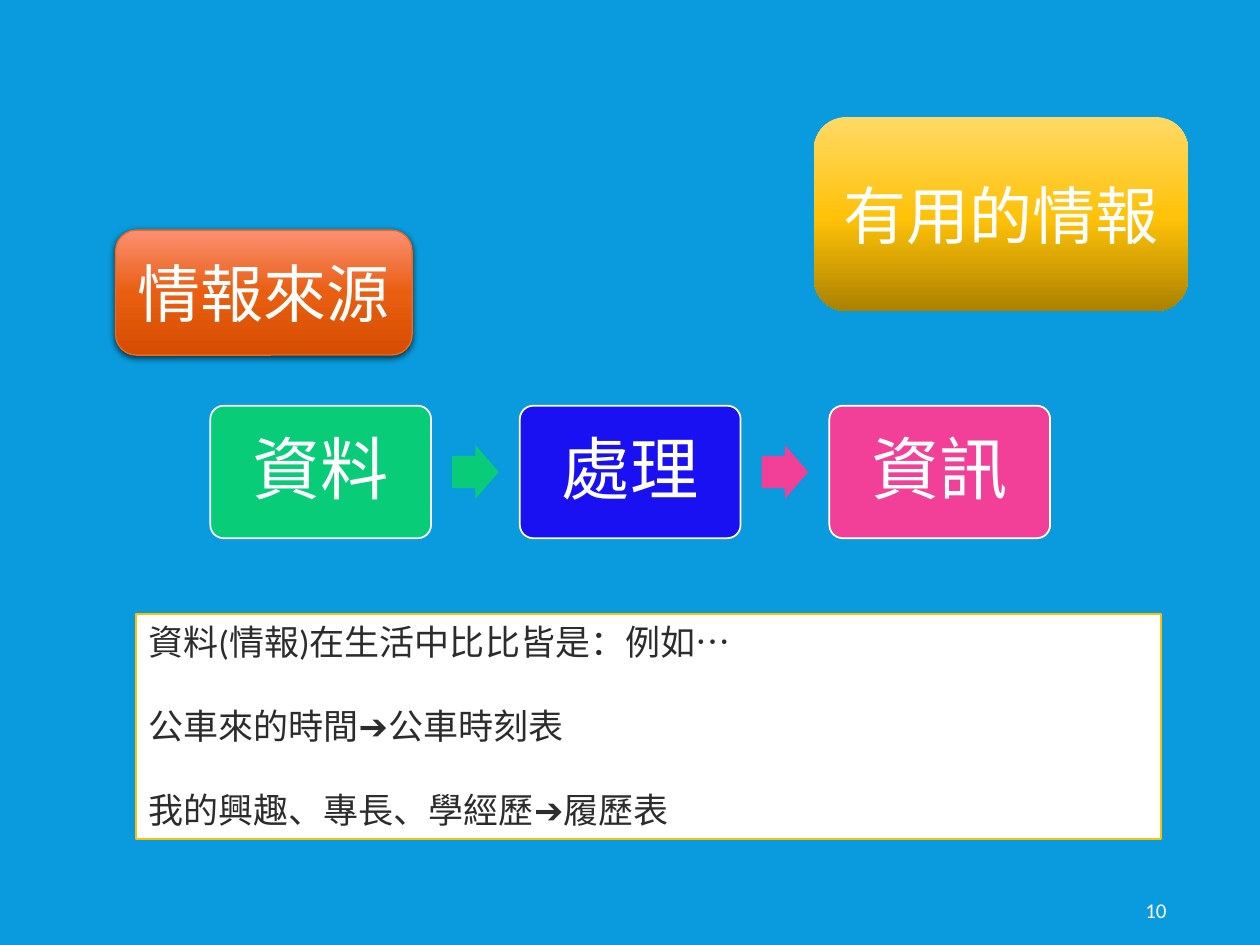
from copy import deepcopy

from lxml.etree import SubElement
from pptx import Presentation
from pptx.dml.color import RGBColor
from pptx.enum.shapes import MSO_SHAPE as Shape
from pptx.enum.text import MSO_ANCHOR as Anchor, PP_ALIGN as Align
from pptx.oxml.ns import qn
from pptx.util import Cm, Pt

FONT = "Calibri"
WHITE = "FFFFFF"
GREEN, BLUE, PINK = "08CC78", "1911F2", "F24099"

STEPS = [("資料", GREEN), ("處理", BLUE), ("資訊", PINK)]
ARROWS = [GREEN, PINK]
GOLD = [(0, "FFD966"), (0.52, "FFC208"), (1, "AB8100")]
ORANGE = [(0, "FB9074"), (0.5, "E95E10"), (1, "D64D01")]
NOTES = [
    "資料(情報)在生活中比比皆是：例如…",
    "公車來的時間➔公車時刻表",
    "我的興趣、專長、學經歷➔履歷表",
]

# Step row, in centimetres
LEFT, TOP, WIDE, HIGH, PITCH = 4.24, 8.18, 4.45, 2.67, 6.24
TIP_W, TIP_H = 0.94, 1.08


def rgb(code):
    return RGBColor.from_string(code)


def add_box(kind, place, fill=None, line=None, weight=1):
    box = slide.shapes.add_shape(kind, *map(Cm, place))
    box.shadow.inherit = False
    if fill:
        box.fill.solid()
        box.fill.fore_color.rgb = rgb(fill)
    if line:
        box.line.color.rgb = rgb(line)
        box.line.width = Pt(weight)
    else:
        box.line.fill.background()
    return box


def write(box, lines, size, color=WHITE, align=Align.CENTER, anchor=Anchor.MIDDLE):
    frame = box.text_frame
    frame.word_wrap = True
    frame.vertical_anchor = anchor
    frame.text = "\n".join(lines)
    for para in frame.paragraphs:
        para.alignment = align
        for run in para.runs:
            run.font.name = FONT
            run.font.size = Pt(size)
            run.font.color.rgb = rgb(color)
    return frame


def shade(box, stops):
    """Fill the box with a three-stop gradient from top to bottom."""
    box.fill.gradient()
    box.fill.gradient_angle = 270
    group = box.fill.gradient_stops[0]._gs.getparent()
    group.append(deepcopy(group[0]))
    for stop, (place, color) in zip(box.fill.gradient_stops, stops):
        stop.position = place
        stop.color.rgb = rgb(color)


def add_shadow(box, blur, dist, alpha):
    """Cast a soft black shadow straight down."""
    effects = box._element.spPr.find(qn("a:effectLst"))
    outer = SubElement(effects, qn("a:outerShdw"), blurRad=str(Pt(blur)),
                       dist=str(Pt(dist)), dir="5400000", rotWithShape="0")
    black = SubElement(outer, qn("a:srgbClr"), val="000000")
    SubElement(black, qn("a:alpha"), val=str(alpha * 1000))


deck = Presentation()
deck.slide_width, deck.slide_height = Cm(25.4), Cm(19.05)
slide = deck.slides.add_slide(deck.slide_layouts[6])
slide.background.fill.solid()
slide.background.fill.fore_color.rgb = rgb("099BDD")

number = slide.shapes.add_textbox(Cm(22.96), Cm(17.83), Cm(1.98), Cm(1.02))
write(number, ["10"], 12, align=Align.LEFT).margin_left = Cm(0.13)

for i, (label, color) in enumerate(STEPS):
    step = add_box(Shape.ROUNDED_RECTANGLE,
                   (LEFT + i * PITCH, TOP, WIDE, HIGH), color, WHITE)
    step.adjustments[0] = 0.1
    write(step, [label], 39).paragraphs[0].line_spacing = 0.9

for i, color in enumerate(ARROWS):
    x = LEFT + i * PITCH + WIDE + (PITCH - WIDE - TIP_W) / 2
    tip = add_box(Shape.RIGHT_ARROW,
                  (x, TOP + (HIGH - TIP_H) / 2, TIP_W, TIP_H), color)
    tip.adjustments[0] = 0.6

useful = add_box(Shape.ROUNDED_RECTANGLE, (16.41, 2.36, 7.54, 3.91))
shade(useful, GOLD)
write(useful, ["有用的情報"], 36)

source = add_box(Shape.ROUNDED_RECTANGLE, (2.33, 4.64, 5.98, 2.52),
                 line="F56617", weight=0.75)
shade(source, ORANGE)
add_shadow(source, 4, 1.2, 68)
write(source, ["情報來源"], 36)

panel = add_box(Shape.RECTANGLE, (2.74, 12.38, 20.66, 4.53), WHITE, "FFC000")
frame = write(panel, NOTES, 20, "2C2C2C", Align.LEFT, Anchor.TOP)
for para in frame.paragraphs[1:]:
    para.space_before = Pt(24)

deck.save("out.pptx")
